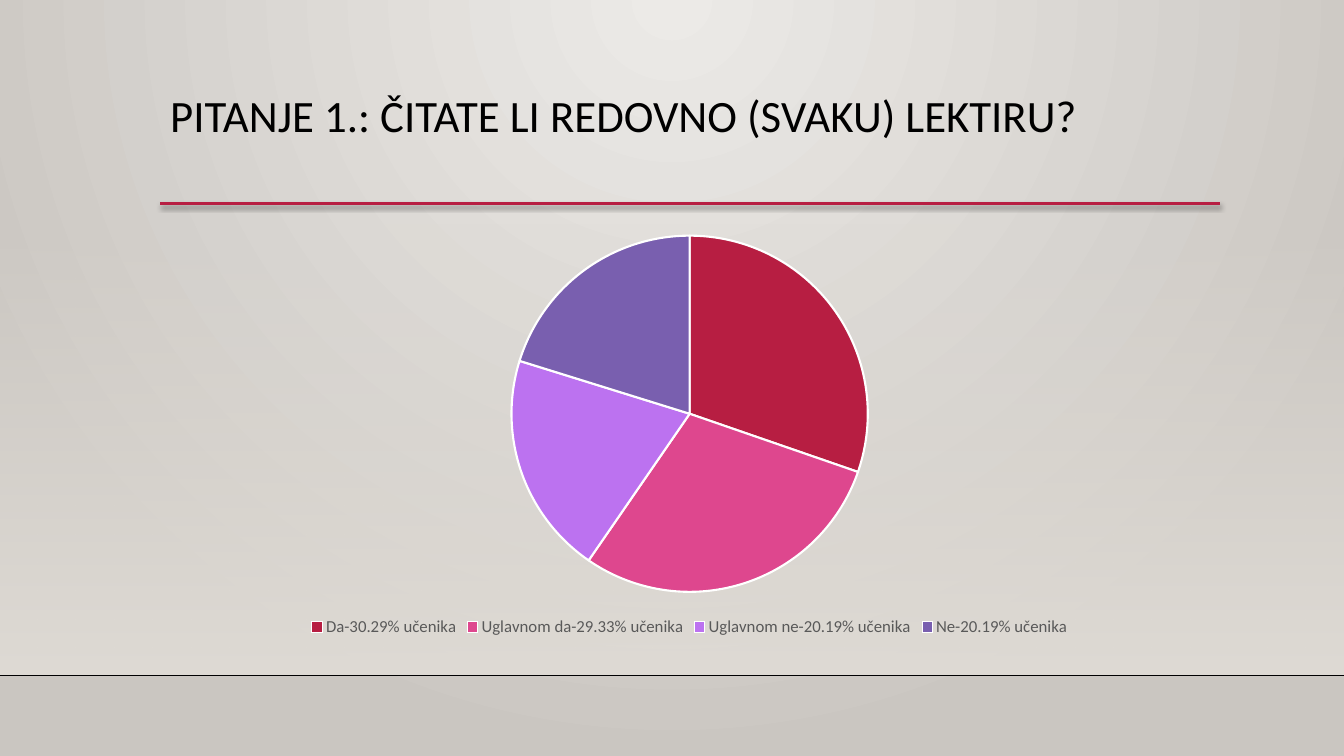
from typing import NamedTuple

from lxml import etree
from pptx import Presentation
from pptx import util as u
from pptx.chart.data import CategoryChartData
from pptx.dml.color import RGBColor
from pptx.enum import chart as ch, shapes, text
from pptx.oxml import parse_xml
from pptx.oxml.ns import nsdecls, qn

COLORS = {
    "bg_light": "ECEAE7", "bg_dark": "CAC6C1", "veil": "DFDBD5",
    "text": "000000", "floor": "000001", "accent": "B71E42",
    "legend": "595959", "white": "FFFFFF",
    "pink": "DE478E", "violet": "BC72F0", "purple": "795FAF",
}
FONT = "Calibri"


class Stop(NamedTuple):
    pos: int
    color: str
    alpha: int = 100


class Rule(NamedTuple):
    left: float
    right: float
    y: float
    color: str
    width: float
    shadow: bool = False


class Answer(NamedTuple):
    label: str
    value: int
    color: str


RULES = [
    Rule(0, 13.33, 6.7, "floor", 1),
    Rule(1.59, 12.1, 2.02, "accent", 2.5, shadow=True),
]
ANSWERS = [
    Answer("Da-30.29% učenika", 30, "accent"),
    Answer("Uglavnom da-29.33% učenika", 29, "pink"),
    Answer("Uglavnom ne-20.19% učenika", 20, "violet"),
    Answer("Ne-20.19% učenika", 20, "purple"),
]


def rgb(name: str) -> RGBColor:
    return RGBColor.from_string(COLORS[name])


def set_gradient(el, stops: list[Stop], geometry: str) -> None:
    """Swap the solid fill inside el for a gradient."""
    gs = "".join(
        f'<a:gs pos="{s.pos * 1000}"><a:srgbClr val="{COLORS[s.color]}">'
        f'<a:alpha val="{s.alpha * 1000}"/></a:srgbClr></a:gs>' for s in stops)
    solid = next(el.iter(qn("a:solidFill")))
    solid.getparent().replace(solid, parse_xml(
        f'<a:gradFill {nsdecls("a")} rotWithShape="1">'
        f'<a:gsLst>{gs}</a:gsLst>{geometry}</a:gradFill>'))


def add_rule(slide, rule: Rule) -> None:
    sp = slide.shapes.add_connector(
        shapes.MSO_CONNECTOR.STRAIGHT, u.Inches(rule.left), u.Inches(rule.y),
        u.Inches(rule.right), u.Inches(rule.y))
    sp.line.color.rgb = rgb(rule.color)
    sp.line.width = u.Pt(rule.width)
    effects = etree.SubElement(sp._element.spPr, qn("a:effectLst"))
    if rule.shadow:
        effects.append(parse_xml(
            f'<a:outerShdw {nsdecls("a")} blurRad="{u.Pt(3.1)}" '
            f'dist="{u.Pt(1.8)}" dir="5400000" rotWithShape="0">'
            f'<a:srgbClr val="{COLORS["text"]}"><a:alpha val="35000"/>'
            '</a:srgbClr></a:outerShdw>'))


def add_title(slide, title: str) -> None:
    sp = slide.shapes.add_textbox(
        u.Inches(1.59), u.Inches(0.88), u.Inches(10.5), u.Inches(1.15))
    tf = sp.text_frame
    tf.word_wrap = True
    tf.vertical_anchor = text.MSO_ANCHOR.TOP
    p = tf.paragraphs[0]
    p.text = title
    p.line_spacing = 0.9
    p.font.size = u.Pt(32)
    p.font.name = FONT
    p.font.color.rgb = rgb("text")


def add_pie(slide, answers: list[Answer]) -> None:
    data = CategoryChartData()
    data.categories = [a.label for a in answers]
    data.add_series("Series 1", [a.value for a in answers])
    chart = slide.shapes.add_chart(
        ch.XL_CHART_TYPE.PIE, u.Inches(1.59), u.Inches(2.2),
        u.Inches(10.5), u.Inches(4.16), data).chart
    chart.has_title = False
    chart.font.size = u.Pt(10)
    chart.font.name = "Arial"
    chart.font.color.rgb = rgb("text")

    chart.has_legend = True
    legend = chart.legend
    legend.position = ch.XL_LEGEND_POSITION.BOTTOM
    legend.include_in_layout = False
    legend.font.size = u.Pt(12)
    legend.font.name = FONT
    legend.font.color.rgb = rgb("legend")

    plot = chart.plots[0]
    plot.vary_by_categories = True
    for i, answer in enumerate(answers):
        fmt = plot.series[0].points[i].format
        fmt.fill.solid()
        fmt.fill.fore_color.rgb = rgb(answer.color)
        fmt.line.color.rgb = rgb("white")
        fmt.line.width = u.Pt(1.5)


def main() -> None:
    prs = Presentation()
    prs.slide_width, prs.slide_height = u.Inches(13.33), u.Inches(7.5)
    slide = prs.slides.add_slide(prs.slide_layouts[6])

    # Background: glow from the top centre
    slide.background.fill.solid()
    set_gradient(
        slide._element, [Stop(0, "bg_light"), Stop(100, "bg_dark")],
        '<a:path path="circle"><a:fillToRect l="50000" t="0" r="50000" '
        'b="100000"/></a:path>')

    # Veil fading in down to the floor line
    sp = slide.shapes.add_shape(
        shapes.MSO_SHAPE.RECTANGLE, 0, u.Inches(2.21),
        prs.slide_width, u.Inches(4.49))
    sp.shadow.inherit = False
    sp.line.fill.background()
    sp.fill.solid()
    set_gradient(sp._element, [Stop(0, "veil", 0), Stop(100, "veil")],
                 '<a:lin ang="5400000" scaled="0"/>')

    # Lines, title and chart
    for rule in RULES:
        add_rule(slide, rule)
    add_title(slide, "PITANJE 1.: ČITATE LI REDOVNO (SVAKU) LEKTIRU?")
    add_pie(slide, ANSWERS)

    prs.save("out.pptx")


if __name__ == "__main__":
    main()
